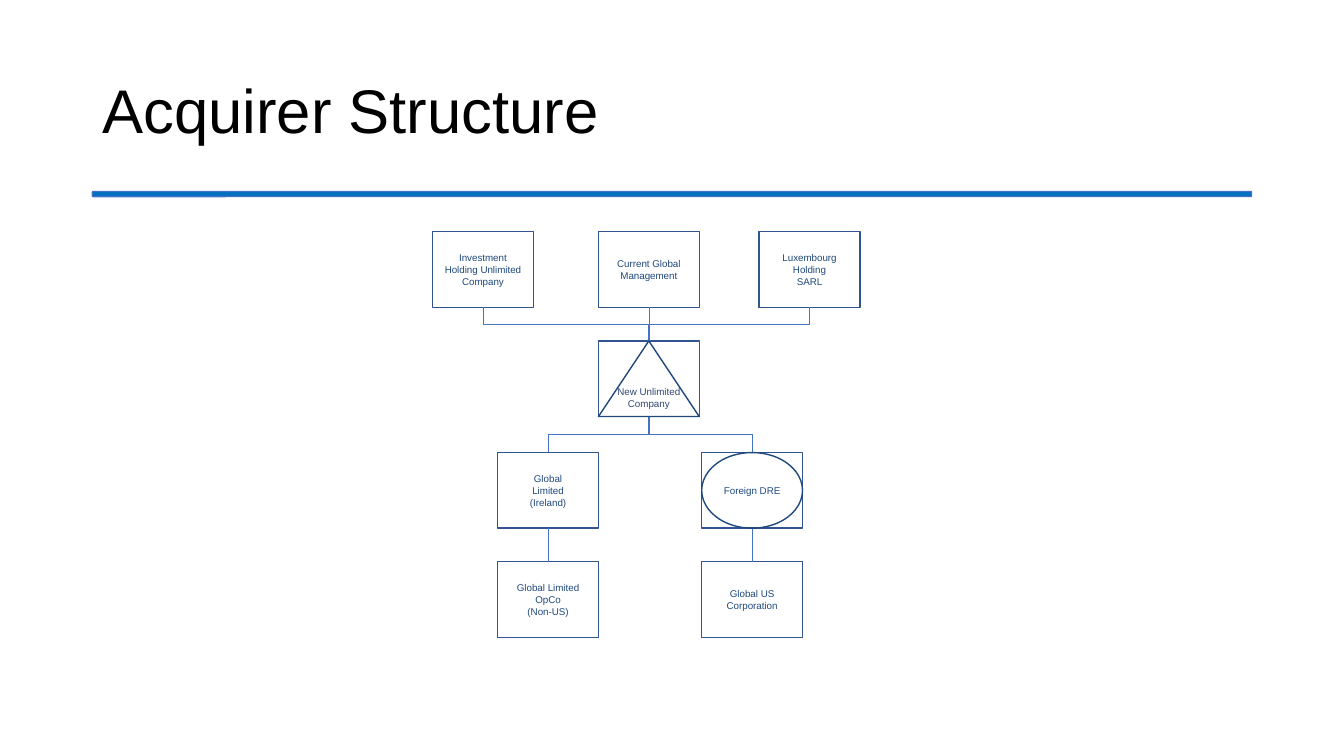
"""Build the Acquirer Structure chart slide."""
from lxml import etree
from pptx import Presentation
from pptx import util as u
from pptx.dml.color import RGBColor
from pptx.enum import shapes, text
from pptx.oxml.ns import qn

BLACK = RGBColor(0x00, 0x00, 0x00)
WHITE = RGBColor(0xFF, 0xFF, 0xFF)
BAND = RGBColor(0x00, 0x70, 0xC0)
LINK = RGBColor(0x44, 0x72, 0xC4)
EDGE = RGBColor(0x32, 0x54, 0x91)
NAVY = RGBColor(0x1F, 0x49, 0x7D)
SLATE = RGBColor(0x32, 0x48, 0x73)

KIND = shapes.MSO_SHAPE
WIDE, HIGH = 72, 54
ROWS = [165.5, 243.5, 323.25, 401.25]


def write(frame, words, size=7, color=NAVY, align=text.PP_ALIGN.CENTER,
          space=None, wrap=True):
    frame.word_wrap = wrap
    frame.auto_size = text.MSO_AUTO_SIZE.NONE
    frame.vertical_anchor = text.MSO_ANCHOR.MIDDLE
    frame.text = words
    for para in frame.paragraphs:
        para.alignment = align
        para.line_spacing = space
        para.font.name = "Arial"
        para.font.size = u.Pt(size)
        para.font.color.rgb = color


class Chart:
    def __init__(self, deck):
        self.slide = deck.slides.add_slide(deck.slide_layouts[5])
        self.items = self.slide.shapes

    def title(self, words, left, top, width, height):
        head = self.items.title
        head.left, head.top = u.Pt(left), u.Pt(top)
        head.width, head.height = u.Pt(width), u.Pt(height)
        write(head.text_frame, words, size=44, color=BLACK,
              align=text.PP_ALIGN.LEFT, space=0.9)

    def shape(self, kind, left, top, width=WIDE, height=HIGH, fill=None,
              edge=EDGE, words="", **style):
        item = self.items.add_shape(kind, u.Pt(left), u.Pt(top),
                                    u.Pt(width), u.Pt(height))
        item.shadow.inherit = False
        if fill is None:
            item.fill.background()
        else:
            item.fill.solid()
            item.fill.fore_color.rgb = fill
        item.line.color.rgb = edge
        item.line.width = u.Pt(1)
        if words:
            write(item.text_frame, words, **style)
        return item

    def line(self, kind, *ends):
        link = self.items.add_connector(kind, *ends)
        link.line.color.rgb = LINK
        link.line.width = u.Pt(0.5)
        etree.SubElement(link._element.spPr, qn("a:effectLst"))
        return link

    def drop(self, upper, lower):
        link = self.line(shapes.MSO_CONNECTOR.STRAIGHT, 0, 0, 0, 0)
        link.begin_connect(upper, 2)
        link.end_connect(lower, 0)

    def elbow(self, upper, lower):
        x1, y1 = upper.left + upper.width // 2, upper.top + upper.height
        x2, y2 = lower.left + lower.width // 2, lower.top
        rise, run = y2 - y1, abs(x2 - x1)
        left = (x1 + x2 - rise) // 2
        top = (y1 + y2 - run) // 2
        ends = [left, left + rise]
        turn = 90
        if x2 > x1:
            ends.reverse()
            turn = 270
        link = self.line(shapes.MSO_CONNECTOR.ELBOW,
                         ends[0], top, ends[1], top + run)
        frame = link._element.spPr.find(qn("a:xfrm"))
        frame.set("rot", str(turn * 60000))


def main():
    deck = Presentation()
    deck.slide_width, deck.slide_height = u.Pt(960), u.Pt(540)
    chart = Chart(deck)
    chart.shape(KIND.ROUNDED_RECTANGLE, 66, 136.8, 828, 3.6,
                fill=BAND, edge=LINK)
    chart.title("Acquirer Structure", 66, 28.75, 828, 104.4)

    plan = {
        "fund": (309, 0, "Investment Holding Unlimited Company"),
        "staff": (427.5, 0, "Current Global Management"),
        "lux": (542.25, 0, "Luxembourg Holding\nSARL"),
        "newco": (427.5, 1, ""),
        "irish": (355.5, 2, "Global\nLimited\n(Ireland)"),
        "dre": (501.25, 2, "Foreign DRE"),
        "opco": (355.5, 3, "Global Limited\nOpCo\n(Non-US)"),
        "corp": (501.25, 3, "Global US Corporation"),
    }
    box = {name: chart.shape(KIND.RECTANGLE, left, ROWS[row], words=words)
           for name, (left, row, words) in plan.items()}

    for top, low in [("staff", "newco"), ("irish", "opco"), ("dre", "corp")]:
        chart.drop(box[top], box[low])
    for top, low in [("fund", "newco"), ("lux", "newco"),
                     ("newco", "irish"), ("newco", "dre")]:
        chart.elbow(box[top], box[low])

    chart.shape(KIND.ISOSCELES_TRIANGLE, plan["newco"][0], ROWS[1],
                fill=WHITE, edge=NAVY, words="New Unlimited\nCompany",
                color=SLATE, wrap=False)
    chart.shape(KIND.OVAL, plan["dre"][0], ROWS[2], edge=NAVY)
    deck.save("out.pptx")


if __name__ == "__main__":
    main()
